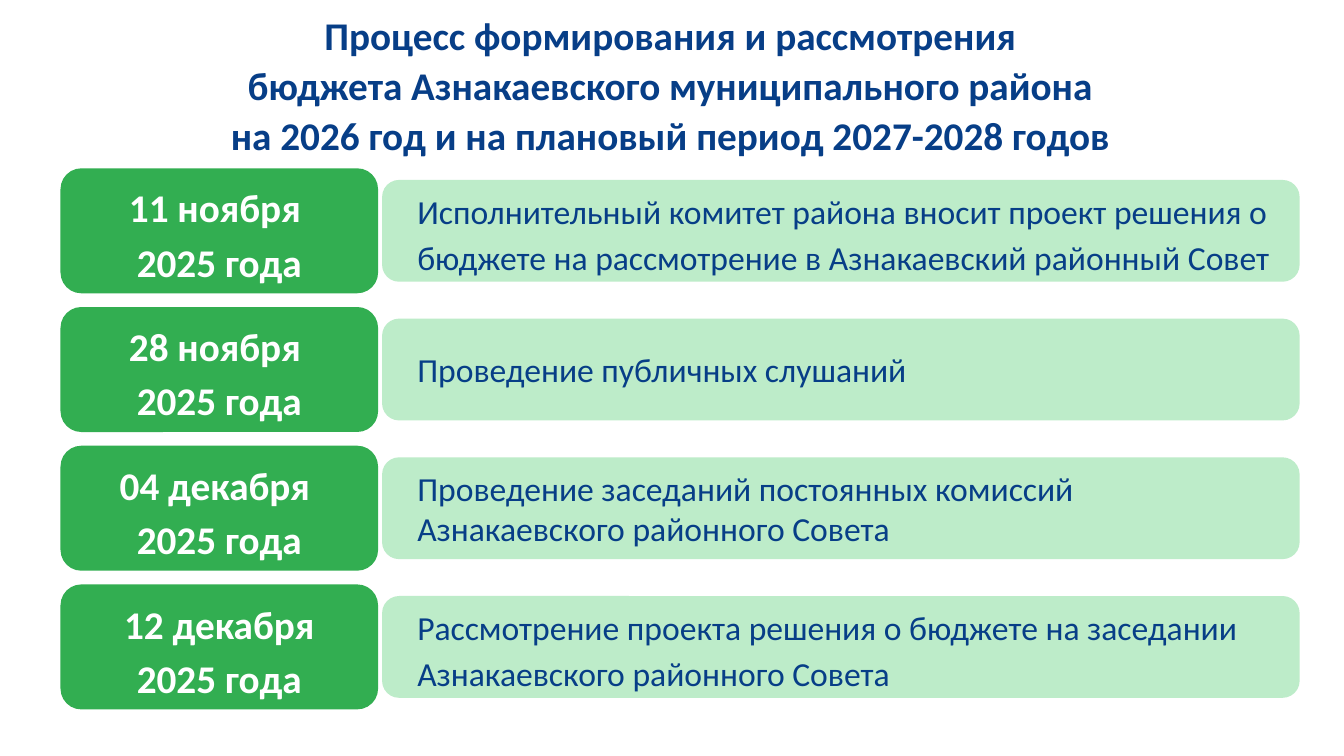
import pptx
import pptx.dml.color
import pptx.enum.shapes
import pptx.enum.text
import pptx.util
from pptx.util import Inches

NAVY = pptx.dml.color.RGBColor(0x07, 0x3E, 0x87)
GREEN = pptx.dml.color.RGBColor(0x32, 0xAE, 0x51)
PALE_GREEN = pptx.dml.color.RGBColor(0xBD, 0xEC, 0xC9)
WHITE = pptx.dml.color.RGBColor(0xFF, 0xFF, 0xFF)

ALIGN = pptx.enum.text.PP_ALIGN
ANCHOR = pptx.enum.text.MSO_ANCHOR

TITLE = (
    "Процесс формирования и рассмотрения\n"
    " бюджета Азнакаевского муниципального района \n"
    "на 2026 год и на плановый период 2027-2028 годов"
)

# Date, step and line spacing of the step; \v is a line break in a paragraph
STAGES = [
    ("11 ноября \n2025 года",
     "Исполнительный комитет района вносит проект решения о бюджете "
     "на рассмотрение в Азнакаевский районный Совет", 1.14),
    ("28 ноября \v2025 года", "Проведение публичных слушаний", 1.0),
    ("04 декабря \v2025 года",
     "Проведение заседаний постоянных комиссий Азнакаевского районного Совета", 1.0),
    ("12 декабря\v2025 года",
     "Рассмотрение проекта решения о бюджете на заседании "
     "Азнакаевского районного Совета", 1.15),
]

FIRST_TOP = 1.67
STAGE_PITCH = 1.376
DATE_HEIGHT = 1.24
STEP_HEIGHT = 1.01


def write_text(shape, text, size, color, bold, align, anchor, spacing, space_before=0):
    text_frame = shape.text_frame
    text_frame.text = text
    text_frame.word_wrap = True
    text_frame.auto_size = pptx.enum.text.MSO_AUTO_SIZE.NONE
    text_frame.vertical_anchor = anchor
    for paragraph in text_frame.paragraphs:
        paragraph.alignment = align
        paragraph.line_spacing = spacing
        paragraph.space_before = pptx.util.Pt(space_before)
        for run in paragraph.runs:
            run.font.name = "Calibri"
            run.font.size = pptx.util.Pt(size)
            run.font.bold = bold
            run.font.color.rgb = color


def add_title(slide):
    title = slide.shapes.title
    title.left, title.top = Inches(0.75), Inches(0.11)
    title.width, title.height = Inches(11.79), Inches(0.5)
    write_text(title, TITLE, 28, NAVY, True, ALIGN.CENTER, ANCHOR.TOP, 0.9, 5.6)


def add_box(slide, left, top, width, height, fill):
    box = slide.shapes.add_shape(
        pptx.enum.shapes.MSO_SHAPE.ROUNDED_RECTANGLE,
        Inches(left), Inches(top), Inches(width), Inches(height))
    box.shadow.inherit = False
    box.fill.solid()
    box.fill.fore_color.rgb = fill
    box.line.fill.background()
    return box


def add_stage(slide, top, date, step, step_spacing):
    # Step description, centred vertically on its date
    step_top = top + (DATE_HEIGHT - STEP_HEIGHT) / 2
    step_box = add_box(slide, 3.79, step_top, 9.1, STEP_HEIGHT, PALE_GREEN)
    write_text(step_box, step, 24, NAVY, False, ALIGN.LEFT, ANCHOR.MIDDLE, step_spacing)
    step_box.text_frame.margin_left = Inches(0.3)

    # Date
    date_box = add_box(slide, 0.6, top, 3.15, DATE_HEIGHT, GREEN)
    write_text(date_box, date, 28, WHITE, True, ALIGN.CENTER, ANCHOR.MIDDLE, 1.15)


def main():
    presentation = pptx.Presentation()
    presentation.slide_width = Inches(13.33)
    presentation.slide_height = Inches(7.5)
    slide = presentation.slides.add_slide(presentation.slide_layouts[5])

    add_title(slide)
    for index, (date, step, step_spacing) in enumerate(STAGES):
        add_stage(slide, FIRST_TOP + index * STAGE_PITCH, date, step, step_spacing)

    presentation.save("out.pptx")


if __name__ == "__main__":
    main()
